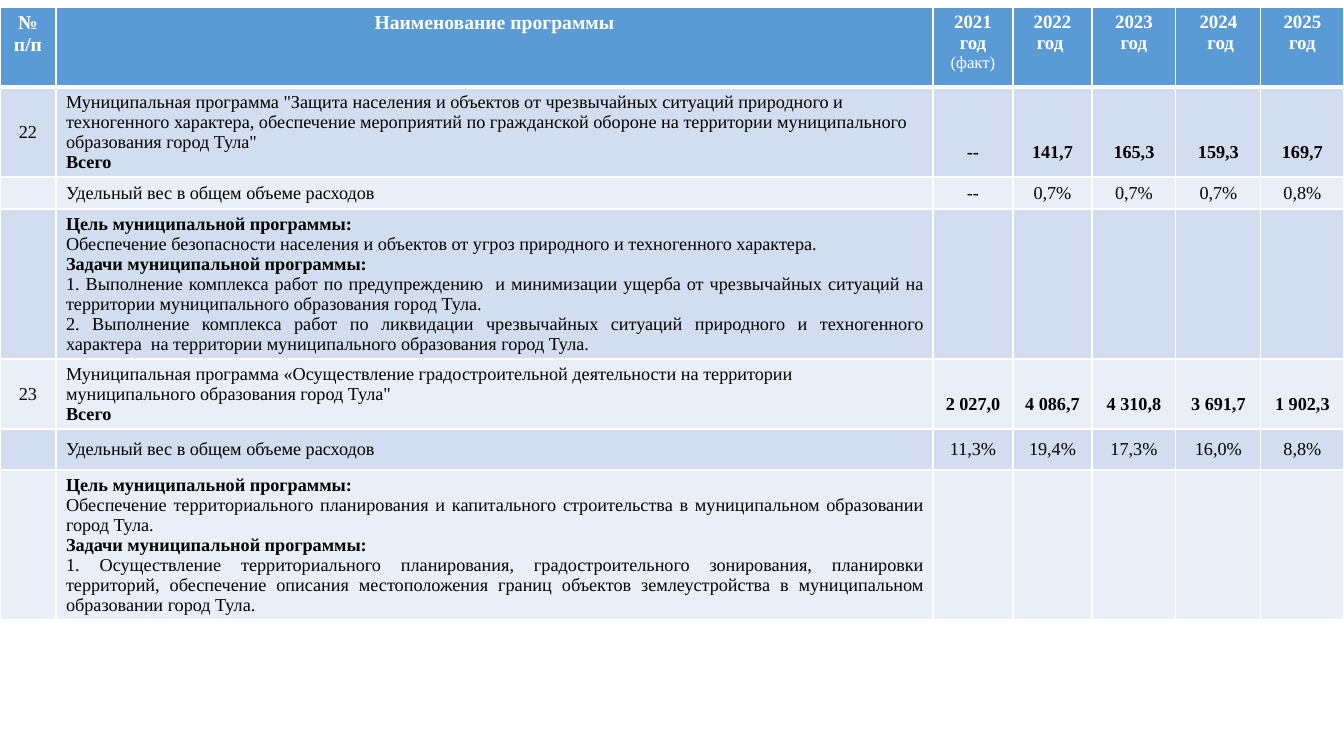
import lxml.etree
import pptx
import pptx.dml.color
import pptx.enum.text
import pptx.oxml.ns
import pptx.util

PX = 12192000 / 1344
FONT = "Times New Roman"
WHITE = pptx.dml.color.RGBColor(0xFF, 0xFF, 0xFF)
BLACK = pptx.dml.color.RGBColor(0, 0, 0)
HEADER = pptx.dml.color.RGBColor(0x5B, 0x9B, 0xD5)
BANDS = [pptx.dml.color.RGBColor(0xD2, 0xDE, 0xEF), pptx.dml.color.RGBColor(0xEA, 0xEF, 0xF7)]
LEFT = pptx.enum.text.PP_ALIGN.LEFT
CENTER = pptx.enum.text.PP_ALIGN.CENTER
JUSTIFY = pptx.enum.text.PP_ALIGN.JUSTIFY
TOP = pptx.enum.text.MSO_ANCHOR.TOP
MIDDLE = pptx.enum.text.MSO_ANCHOR.MIDDLE

COL_WIDTHS = [56, 877, 80, 79, 84, 85, 83]
ROW_HEIGHTS = [80, 90, 30, 150, 70, 41, 150]
MARGIN = 5
LINE = 20

HEAD = {"size": pptx.util.Pt(14), "bold": True, "color": WHITE}
YEAR = {**HEAD, "size": pptx.util.Pt(13.5)}
FACT = {**HEAD, "size": pptx.util.Pt(12), "bold": False}
BODY = {"size": pptx.util.Pt(13), "bold": False, "color": BLACK}
BOLD = {**BODY, "bold": True}

HEADINGS = [
    [[("№ п/п", HEAD)]],
    [[("Наименование программы", HEAD)]],
    [[("2021 год ", YEAR), ("(факт)", FACT)]],
    [[("2022 год ", YEAR)]],
    [[("2023 год", YEAR)]],
    [[("2024", YEAR)], [(" год", YEAR)]],
    [[("2025", YEAR)], [("год", YEAR)]],
]
PROGRAMS = [
    {
        "number": "22",
        "name": 'Муниципальная программа "Защита населения и объектов от чрезвычайных ситуаций природного и техногенного характера, обеспечение мероприятий по гражданской обороне на территории муниципального образования город Тула"',
        "totals": ["--", "141,7", "165,3", "159,3", "169,7"],
        "drop": 2 * LINE,
        "shares": ["--", "0,7%", "0,7%", "0,7%", "0,8%"],
        "goal": "Обеспечение безопасности населения и объектов от угроз природного и техногенного характера.",
        "tasks": [
            "1. Выполнение комплекса работ по предупреждению  и минимизации ущерба от чрезвычайных ситуаций на территории муниципального образования город Тула.",
            "2. Выполнение комплекса работ по ликвидации чрезвычайных ситуаций природного и техногенного характера  на территории муниципального образования город Тула.",
        ],
    },
    {
        "number": "23",
        "name": 'Муниципальная программа «Осуществление градостроительной деятельности на территории муниципального образования город Тула"',
        "totals": ["2 027,0", "4 086,7", "4 310,8", "3 691,7", "1 902,3"],
        "drop": LINE,
        "shares": ["11,3%", "19,4%", "17,3%", "16,0%", "8,8%"],
        "goal": "Обеспечение территориального планирования и капитального строительства в муниципальном образовании город Тула.",
        "tasks": [
            "1. Осуществление территориального планирования, градостроительного зонирования, планировки территорий, обеспечение описания местоположения границ объектов землеустройства в муниципальном образовании город Тула.",
        ],
    },
]


def px(n):
    return pptx.util.Emu(round(n * PX))


def set_borders(cell, row):
    tcPr = cell._tc.get_or_add_tcPr()
    widths = {"lnL": 1, "lnR": 1, "lnT": 3 if row == 1 else 1, "lnB": 3 if row == 0 else 1}
    for i, (side, width) in enumerate(widths.items()):
        ln = lxml.etree.Element(pptx.oxml.ns.qn("a:" + side), w=str(pptx.util.Pt(width)))
        fill = lxml.etree.SubElement(ln, pptx.oxml.ns.qn("a:solidFill"))
        lxml.etree.SubElement(fill, pptx.oxml.ns.qn("a:srgbClr"), val=str(WHITE))
        tcPr.insert(i, ln)


def write_cell(cell, paragraphs, align, drop=0):
    tf = cell.text_frame
    cell.margin_top = px(MARGIN + drop)
    cell.margin_bottom = px(MARGIN)
    for i, runs in enumerate(paragraphs):
        p = tf.add_paragraph() if i else tf.paragraphs[0]
        p.alignment = align
        for text, fmt in runs:
            r = p.add_run()
            r.text = text
            r.font.name = FONT
            r.font.color.rgb = fmt["color"]
            for key in ("size", "bold"):
                setattr(r.font, key, fmt[key])
    if not paragraphs:
        lxml.etree.SubElement(tf.paragraphs[0]._p, pptx.oxml.ns.qn("a:endParaRPr"), sz="1300")


def write_header(table):
    for col, paragraphs in enumerate(HEADINGS):
        write_cell(table.cell(0, col), paragraphs, CENTER)


def write_values(table, row, values, fmt, drop=0):
    for col, value in enumerate(values, 2):
        write_cell(table.cell(row, col), [[(value, fmt)]] if value else [], CENTER, drop)


def write_program(table, row, program):
    write_cell(table.cell(row, 0), [[(program["number"], BODY)]], CENTER)
    write_cell(table.cell(row, 1), [[(program["name"], BODY)], [("Всего", BOLD)]], LEFT)
    write_values(table, row, program["totals"], BOLD, program["drop"])

    write_cell(table.cell(row + 1, 0), [], CENTER)
    write_cell(table.cell(row + 1, 1), [[("Удельный вес в общем объеме расходов", BODY)]], JUSTIFY)
    write_values(table, row + 1, program["shares"], BODY)

    aims = [
        [("Цель муниципальной программы: ", BOLD)],
        [(program["goal"], BODY)],
        [("Задачи муниципальной программы:", BOLD)],
    ] + [[(task, BODY)] for task in program["tasks"]]
    write_cell(table.cell(row + 2, 0), [], CENTER)
    write_cell(table.cell(row + 2, 1), aims, JUSTIFY)
    write_values(table, row + 2, [""] * 5, BODY)


def add_program_table(slide, x, y, w):
    h = sum(ROW_HEIGHTS)
    sp = slide.shapes.add_table(len(ROW_HEIGHTS), len(COL_WIDTHS), px(x), px(y), px(w), px(h))
    table = sp.table
    for column, width in zip(table.columns, COL_WIDTHS):
        column.width = px(w * width / sum(COL_WIDTHS))
    for i, (row, height) in enumerate(zip(table.rows, ROW_HEIGHTS)):
        row.height = px(height)
        for cell in row.cells:
            cell.vertical_anchor = MIDDLE if i else TOP
            cell.fill.solid()
            cell.fill.fore_color.rgb = BANDS[(i - 1) % 2] if i else HEADER
            set_borders(cell, i)
    write_header(table)
    for i, program in enumerate(PROGRAMS):
        write_program(table, 1 + 3 * i, program)


def main():
    prs = pptx.Presentation()
    prs.slide_width, prs.slide_height = px(1344), px(756)
    slide = prs.slides.add_slide(prs.slide_layouts[6])
    add_program_table(slide, 0, 7, 1344)
    prs.save("out.pptx")


if __name__ == "__main__":
    main()
